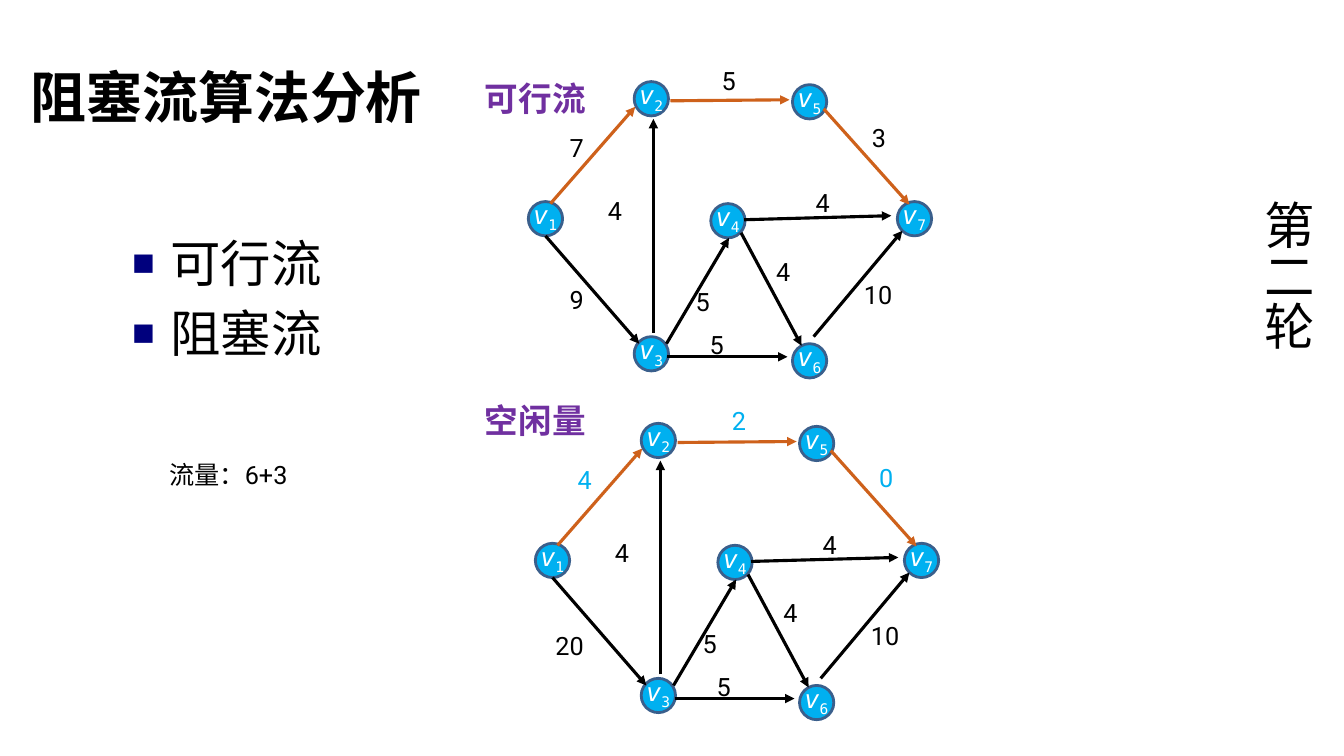
"""Build the slide on blocking flow analysis with two flow networks."""
from lxml.etree import SubElement
from pptx import Presentation
from pptx.dml.color import RGBColor
from pptx.enum.shapes import MSO_CONNECTOR, MSO_SHAPE
from pptx.enum.text import MSO_ANCHOR, MSO_AUTO_SIZE, PP_ALIGN
from pptx.oxml.ns import qn
from pptx.util import Inches, Pt

BLACK, WHITE, BLUE, OUTLINE = "000000", "FFFFFF", "00B0F0", "3A5F8C"
ORANGE, PURPLE, NAVY = "CE611B", "7030A0", "00007D"

TITLE = "阻塞流算法分析"
BULLETS = ["可行流", "阻塞流"]
CAPTIONS = [
    ("可行流", 4.71, 0.72, 1.55, 24, PURPLE, True),
    ("空闲量", 4.71, 3.92, 1.45, 24, PURPLE, True),
    ("流量：6+3", 1.58, 4.51, 1.9, 18, BLACK, False),
]
ROUND = "第二轮"

NODE_SIZE = 0.34
NODES = {
    "1": (5.24, 2.0), "2": (6.29, 0.81), "3": (6.29, 3.34), "5": (7.86, 0.84),
    "4": (7.05, 2.02), "6": (7.86, 3.41), "7": (8.9, 2.0),
}
EDGES = [
    ((5.46, 2.02), (6.3, 1.06), ORANGE),
    ((5.41, 2.34), (6.34, 3.41), BLACK),
    ((6.48, 3.3), (6.48, 1.18), BLACK),
    ((6.61, 3.41), (7.23, 2.36), BLACK),
    ((6.62, 3.54), (7.81, 3.54), BLACK),
    ((7.35, 2.31), (7.95, 3.43), BLACK),
    ((8.07, 3.34), (8.95, 2.29), BLACK),
    ((7.38, 2.18), (8.84, 2.14), BLACK),
    ((8.17, 1.08), (9.02, 2.03), ORANGE),
    ((6.65, 1.0), (7.83, 0.99), ORANGE),
]
SHARED_WEIGHTS = [
    ("4", 5.93, 1.89, BLACK), ("5", 6.8, 2.79, BLACK), ("5", 6.94, 3.22, BLACK),
    ("4", 7.6, 2.49, BLACK), ("4", 7.99, 1.81, BLACK), ("10", 8.47, 2.72, BLACK),
]
NETWORKS = [
    ((0.07, 3.39), [("4", 5.56, 1.17, BLUE), ("20", 5.34, 2.81, BLACK),
                    ("0", 8.55, 1.15, BLUE), ("2", 7.09, 0.58, BLUE)]),
    ((0, 0), [("7", 5.55, 1.26, BLACK), ("9", 5.55, 2.77, BLACK),
              ("3", 8.55, 1.16, BLACK), ("5", 7.06, 0.6, BLACK)]),
]


def color(value):
    return RGBColor.from_string(value)


def style(paragraph, size, font, value, bold=False):
    for run in paragraph.runs:
        run.font.size, run.font.name, run.font.bold = Pt(size), font, bold
        run.font.color.rgb = color(value)


def place(shape, left, top, width, height):
    shape.left, shape.top = Inches(left), Inches(top)
    shape.width, shape.height = Inches(width), Inches(height)


def add_text(slide, text, left, top, width, height, size, value, bold=False):
    box = slide.shapes.add_textbox(Inches(left), Inches(top), Inches(width), Inches(height))
    frame = box.text_frame
    frame.text = text
    frame.word_wrap = True
    frame.auto_size = MSO_AUTO_SIZE.SHAPE_TO_FIT_TEXT
    style(frame.paragraphs[0], size, "Roboto", value, bold)
    return box


def add_node(slide, number, left, top):
    circle = slide.shapes.add_shape(MSO_SHAPE.OVAL, Inches(left), Inches(top),
                                    Inches(NODE_SIZE), Inches(NODE_SIZE))
    circle.shadow.inherit = False
    circle.fill.solid()
    circle.fill.fore_color.rgb = color(BLUE)
    circle.line.color.rgb = color(OUTLINE)
    circle.line.width = Pt(2)
    label = add_text(slide, "v", left - 0.05, top - 0.07, 0.52, 0.4, 18, WHITE)
    paragraph = label.text_frame.paragraphs[0]
    paragraph.add_run().text = number
    style(paragraph, 18, "DejaVu Sans Mono", WHITE)
    letter, subscript = paragraph.runs
    letter.font.italic = True
    subscript.font.italic = False
    subscript.font._element.set("baseline", "-25000")


def add_arrow(slide, start, end, value):
    arrow = slide.shapes.add_connector(MSO_CONNECTOR.STRAIGHT,
                                       *(Inches(number) for number in start + end))
    arrow.line.color.rgb = color(value)
    arrow.line.width = Pt(2.25)
    SubElement(arrow.line._get_or_add_ln(), qn("a:tailEnd"), type="triangle")
    SubElement(arrow._element.spPr, qn("a:effectLst"))


def add_network(slide, offset, weights):
    right, down = offset
    for number, (left, top) in NODES.items():
        add_node(slide, number, left + right, top + down)
    for start, end, value in EDGES:
        add_arrow(slide, (start[0] + right, start[1] + down),
                  (end[0] + right, end[1] + down), value)
    for text, left, top, value in SHARED_WEIGHTS + weights:
        add_text(slide, text, left + right, top + down, 0.79, 0.4, 18, value)


def fill_title(title):
    place(title, 0.2, 0.19, 10.29, 1.53)
    frame = title.text_frame
    frame.text = TITLE
    frame.vertical_anchor = MSO_ANCHOR.MIDDLE
    frame.paragraphs[0].alignment = PP_ALIGN.LEFT
    style(frame.paragraphs[0], 40, "Arial", BLACK, True)


def fill_bullets(body):
    place(body, 1.21, 2.25, 2.28, 2.45)
    frame = body.text_frame
    frame.text = "\n".join(BULLETS)
    frame.auto_size = MSO_AUTO_SIZE.NONE
    for index, paragraph in enumerate(frame.paragraphs):
        properties = paragraph._p.get_or_add_pPr()
        properties.set("marL", str(Inches(0.38)))
        properties.set("indent", str(Inches(-0.38)))
        bullet_color = SubElement(properties, qn("a:buClr"))
        SubElement(bullet_color, qn("a:srgbClr"), val=NAVY)
        SubElement(properties, qn("a:buSzPct"), val="75000")
        SubElement(properties, qn("a:buChar"), char="■")
        paragraph.space_before = Pt(7.2 if index else 0)
        style(paragraph, 36, "Noto Sans CJK SC", BLACK)


def main():
    presentation = Presentation()
    presentation.slide_width, presentation.slide_height = Inches(13.33), Inches(7.5)
    slide = presentation.slides.add_slide(presentation.slide_layouts[1])
    fill_title(slide.shapes.title)
    fill_bullets(slide.placeholders[1])
    for offset, weights in NETWORKS:
        add_network(slide, offset, weights)
    for text, left, top, width, size, value, bold in CAPTIONS:
        add_text(slide, text, left, top, width, size / 48, size, value, bold)
    round_label = add_text(slide, ROUND, 12.31, 1.89, 0.81, 1.76, 36, BLACK)
    round_label.text_frame._txBody.bodyPr.set("vert", "eaVert")
    presentation.save("out.pptx")


if __name__ == "__main__":
    main()
